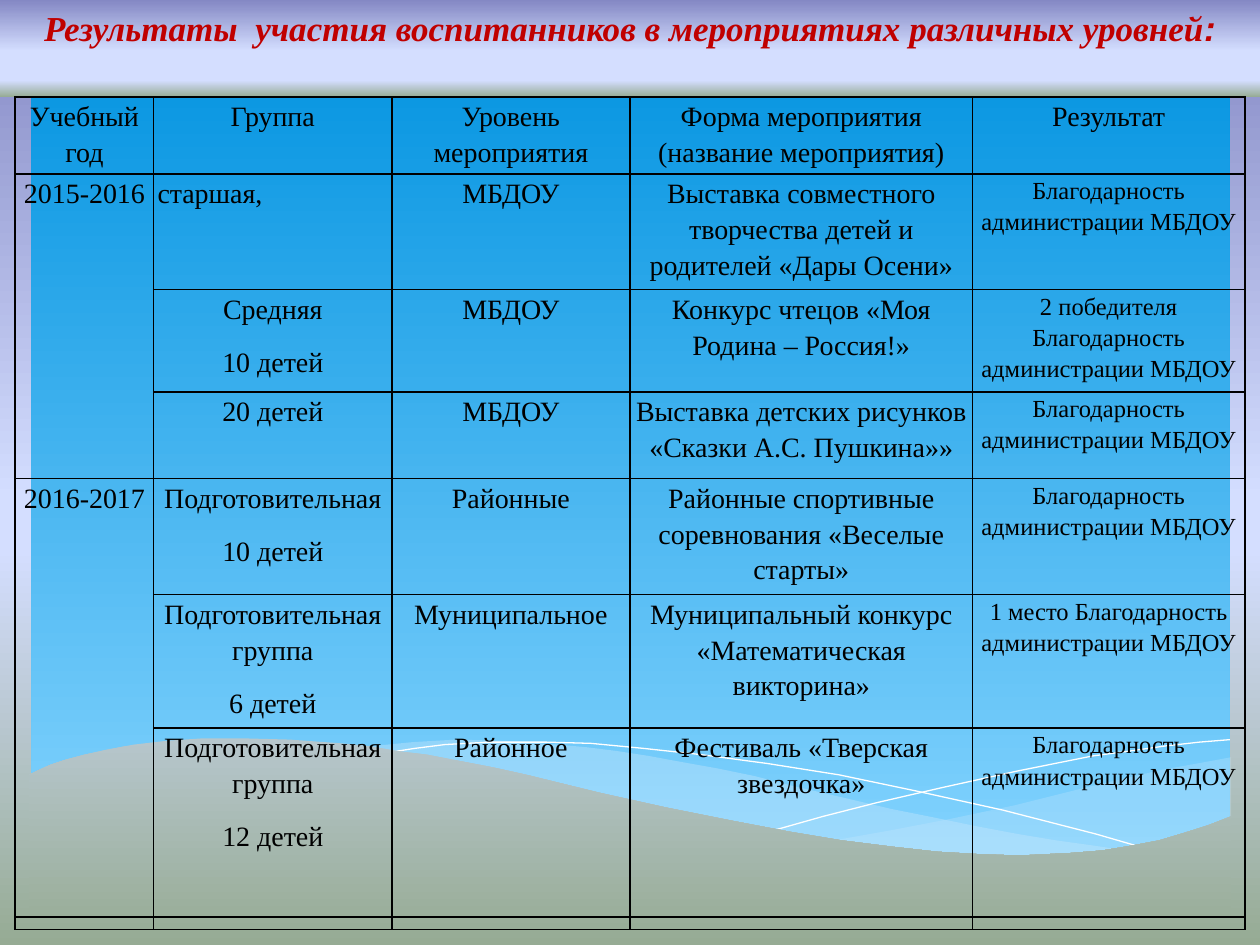
from dataclasses import dataclass
from typing import Optional

from lxml.etree import SubElement
from pptx import Presentation
from pptx.dml.color import RGBColor
from pptx.enum.shapes import MSO_SHAPE as Shape
from pptx.enum.text import MSO_ANCHOR as Anchor, PP_ALIGN as Align
from pptx.oxml import parse_xml
from pptx.oxml.ns import nsdecls, qn
from pptx.util import Inches, Pt

SERIF = "Times New Roman"
SKY = [(0, "8488C4"), (53, "D4DEFF"), (58, "D4DEFF"), (100, "96AB94")]
BANNER = [(0, "8488C4"), (53, "D4DEFF"), (83, "D4DEFF"), (100, "96AB94")]
PANEL = [(0, "0293E0"), (100, "83D3FE")]
GROUND = [(0, "B6C6CC"), (100, "9AAE9A")]  # the sky colours at the height of the hill

RIGHT_SWELL = [
    (9.77, 6.01), (9.5, 6.06), (9.22, 6.11), (8.92, 6.18), (8.62, 6.25), (8.06, 6.39),
    (7.54, 6.5), (7.07, 6.59), (6.62, 6.67), (6.92, 6.71), (7.19, 6.74), (7.45, 6.77),
    (7.7, 6.79), (8.04, 6.8), (8.36, 6.79), (8.64, 6.77), (8.9, 6.74), (9.14, 6.69),
    (9.37, 6.63), (9.51, 6.59), (9.77, 6.49)]
LONG_SWELL = [
    (8.94, 6.75), (8.67, 6.71), (8.38, 6.67), (8.08, 6.62), (7.76, 6.56), (7.42, 6.49),
    (7.07, 6.42), (6.69, 6.33), (6.3, 6.24), (5.99, 6.16), (5.7, 6.1), (5.42, 6.05),
    (5.15, 6), (4.89, 5.96), (4.65, 5.93), (4.42, 5.91), (4, 5.88), (3.62, 5.87),
    (3.28, 5.89), (2.87, 5.93), (3.23, 5.98), (3.63, 6.05), (4.05, 6.13), (4.5, 6.24),
    (4.91, 6.34), (5.3, 6.42), (5.67, 6.5), (6.02, 6.57), (6.35, 6.63), (6.66, 6.68),
    (6.96, 6.72), (7.23, 6.76), (7.49, 6.78), (7.74, 6.79), (8.08, 6.8), (8.49, 6.79)]
FALLING_LINE = [
    (3.1, 5.97), (3.29, 5.94), (3.53, 5.91), (3.88, 5.89), (4.33, 5.89), (4.69, 5.9),
    (5.11, 5.94), (5.57, 5.99), (6.09, 6.06), (6.66, 6.15), (7.28, 6.28), (7.96, 6.43),
    (8.7, 6.62), (9.08, 6.73)]
RISING_LINE = [
    (6.14, 6.59), (6.53, 6.48), (6.96, 6.37), (7.48, 6.25), (8.07, 6.12), (8.67, 6),
    (8.97, 5.96), (9.25, 5.92), (9.52, 5.89), (9.76, 5.87)]
HILL = [
    (9.77, 6.48), (9.59, 6.55), (9.4, 6.61), (9.2, 6.67), (8.99, 6.71), (8.75, 6.75),
    (8.5, 6.77), (8.09, 6.79), (7.78, 6.78), (7.44, 6.76), (7.08, 6.72), (6.68, 6.67),
    (6.26, 6.6), (5.79, 6.51), (5.29, 6.41), (4.75, 6.29), (4.18, 6.15), (3.91, 6.09),
    (3.65, 6.04), (3.39, 5.99), (3.15, 5.96), (2.92, 5.92), (2.71, 5.9), (2.3, 5.87),
    (1.93, 5.86), (1.61, 5.86), (1.32, 5.88), (1.06, 5.91), (0.85, 5.95), (0.67, 5.99),
    (0.52, 6.03), (0.4, 6.07), (0.29, 6.12), (0.23, 6.15), (0.23, 7.31), (9.77, 7.31)]


@dataclass
class Wave:
    points: list
    color: Optional[str] = None
    opacity: int = 100
    stops: Optional[list] = None
    closed: bool = True


WAVES = [
    Wave(RIGHT_SWELL, "C6E7FC", 29),
    Wave(LONG_SWELL, "C6E7FC", 40),
    Wave(FALLING_LINE, "FFFFFF", closed=False),
    Wave(RISING_LINE, "FFFFFF", closed=False),
    Wave(HILL, stops=GROUND),
]


@dataclass
class Event:
    year: str
    group: list
    level: str
    name: str
    result: str


THANKS = "Благодарность администрации МБДОУ"
GARDEN = "МБДОУ"
PREP = "Подготовительная"
HEADINGS = ["Учебный год", "Группа", "Уровень мероприятия",
            "Форма мероприятия (название мероприятия)", "Результат"]
EVENTS = [
    Event("2015-2016", ["старшая,"], GARDEN,
          "Выставка совместного творчества детей и родителей «Дары Осени»", THANKS),
    Event("", ["Средняя", "10 детей"], GARDEN,
          "Конкурс чтецов «Моя Родина – Россия!»", f"2 победителя {THANKS}"),
    Event("", ["20 детей"], GARDEN,
          "Выставка детских рисунков «Сказки А.С. Пушкина»»", THANKS),
    Event("2016-2017", [PREP, "10 детей"], "Районные",
          "Районные спортивные соревнования «Веселые старты»", THANKS),
    Event("", [f"{PREP} группа", "6 детей"], "Муниципальное",
          "Муниципальный конкурс «Математическая викторина»", f"1 место {THANKS}"),
    Event("", [f"{PREP} группа", "12 детей"], "Районное",
          "Фестиваль «Тверская звездочка»", THANKS),
]
COLUMN_WIDTHS = [1.1, 1.89, 1.89, 2.72, 2.16]
ROW_HEIGHTS = [0.61, 0.92, 0.81, 0.69, 0.92, 1.06, 1.5, 0.1]
YEAR_SPANS = [(1, 3), (4, 6)]


def rgb(color: str) -> RGBColor:
    return RGBColor.from_string(color)


def set_gradient(fill, element, stops: list) -> None:
    """Fill from top to bottom with (percent, colour) stops."""
    fill.gradient()
    fill.gradient_angle = 270
    stop_list = next(element.iter(qn("a:gsLst")))
    for old_stop in list(stop_list):
        stop_list.remove(old_stop)
    for percent, color in stops:
        stop = SubElement(stop_list, qn("a:gs"), pos=str(percent * 1000))
        SubElement(stop, qn("a:srgbClr"), val=color)


def draw_wave(slide, wave: Wave) -> None:
    points = [(Inches(x), Inches(y)) for x, y in wave.points]
    builder = slide.shapes.build_freeform(*points[0])
    builder.add_line_segments(points[1:], close=wave.closed)
    shape = builder.convert_to_shape()
    shape.shadow.inherit = False
    if not wave.closed:
        shape.fill.background()
        shape.line.color.rgb = rgb(wave.color)
        shape.line.width = 0
        return
    shape.line.fill.background()
    if wave.stops:
        set_gradient(shape.fill, shape.element, wave.stops)
    else:
        shape.fill.solid()
        shape.fill.fore_color.rgb = rgb(wave.color)
        color = next(shape.element.iter(qn("a:srgbClr")))
        SubElement(color, qn("a:alpha"), val=str(wave.opacity * 1000))


def draw_panel(slide) -> None:
    panel = slide.shapes.add_shape(Shape.ROUNDED_RECTANGLE, Inches(0.25), Inches(0.25),
                                   Inches(9.51), Inches(6.6))
    panel.adjustments[0] = 0.013
    panel.shadow.inherit = False
    panel.line.fill.background()
    set_gradient(panel.fill, panel.element, PANEL)


def draw_title(slide) -> None:
    title = slide.shapes.title
    title.element.getparent().append(title.element)  # in front of the panel
    title.left, title.top, title.width, title.height = 0, 0, Inches(10), Inches(0.77)
    set_gradient(title.fill, title.element, BANNER)
    frame = title.text_frame
    frame.vertical_anchor = Anchor.TOP
    frame.word_wrap = True
    paragraph = frame.paragraphs[0]
    paragraph.alignment = Align.CENTER
    words = "Результаты  участия воспитанников в мероприятиях различных уровней"
    for text, font_name in [(words, SERIF), (":", "Arial")]:
        run = paragraph.add_run()
        run.text = text
        style = {"name": font_name, "size": Pt(20), "bold": True, "italic": True}
        for key, value in style.items():
            setattr(run.font, key, value)
        run.font.color.rgb = rgb("C00000")


def format_cell(cell) -> None:
    margins = {"margin_left": 0.03, "margin_right": 0.03, "margin_top": 0, "margin_bottom": 0}
    for key, value in margins.items():
        setattr(cell, key, Inches(value))
    cell.fill.background()
    properties = cell._tc.get_or_add_tcPr()
    for index, side in enumerate("LRTB"):
        properties.insert(index, parse_xml(
            f'<a:ln{side} {nsdecls("a")} w="{Pt(1)}"><a:solidFill>'
            f'<a:srgbClr val="000000"/></a:solidFill></a:ln{side}>'))


def write_cell(cell, lines: list, size: int, alignment=Align.CENTER) -> None:
    cell.text = "\n".join(lines)
    for paragraph in cell.text_frame.paragraphs:
        layout = {"alignment": alignment, "line_spacing": 1.15, "space_after": Pt(10)}
        for key, value in layout.items():
            setattr(paragraph, key, value)
        for run in paragraph.runs:
            run.font.name, run.font.size = SERIF, Pt(size)
            run.font.color.rgb = rgb("000000")


def draw_table(slide) -> None:
    table = slide.shapes.add_table(
        len(ROW_HEIGHTS), len(COLUMN_WIDTHS), Inches(0.12), Inches(0.77),
        Inches(sum(COLUMN_WIDTHS)), Inches(sum(ROW_HEIGHTS))).table
    table.first_row = table.horz_banding = False
    for column, width in zip(table.columns, COLUMN_WIDTHS):
        column.width = Inches(width)
    for row, height in zip(table.rows, ROW_HEIGHTS):
        row.height = Inches(height)
    for cell in table.iter_cells():
        format_cell(cell)
    for column, heading in enumerate(HEADINGS):
        write_cell(table.cell(0, column), [heading], 16)
    for row, event in enumerate(EVENTS, start=1):
        if event.year:
            write_cell(table.cell(row, 0), [event.year], 16)
        write_cell(table.cell(row, 1), event.group, 16, Align.LEFT if row == 1 else Align.CENTER)
        write_cell(table.cell(row, 2), [event.level], 16)
        write_cell(table.cell(row, 3), [event.name], 16)
        write_cell(table.cell(row, 4), [event.result], 14)
    for first, last in YEAR_SPANS:
        table.cell(first, 0).merge(table.cell(last, 0))
    for cell in table.rows[len(ROW_HEIGHTS) - 1].cells:  # keep the empty row thin
        SubElement(cell.text_frame.paragraphs[0]._p, qn("a:endParaRPr"), sz="400")


def main() -> None:
    presentation = Presentation()
    presentation.slide_width, presentation.slide_height = Inches(10), Inches(7.5)
    slide = presentation.slides.add_slide(presentation.slide_layouts[5])
    set_gradient(slide.background.fill, slide.element, SKY)
    draw_panel(slide)
    for wave in WAVES:
        draw_wave(slide, wave)
    draw_title(slide)
    draw_table(slide)
    presentation.save("out.pptx")


if __name__ == "__main__":
    main()
